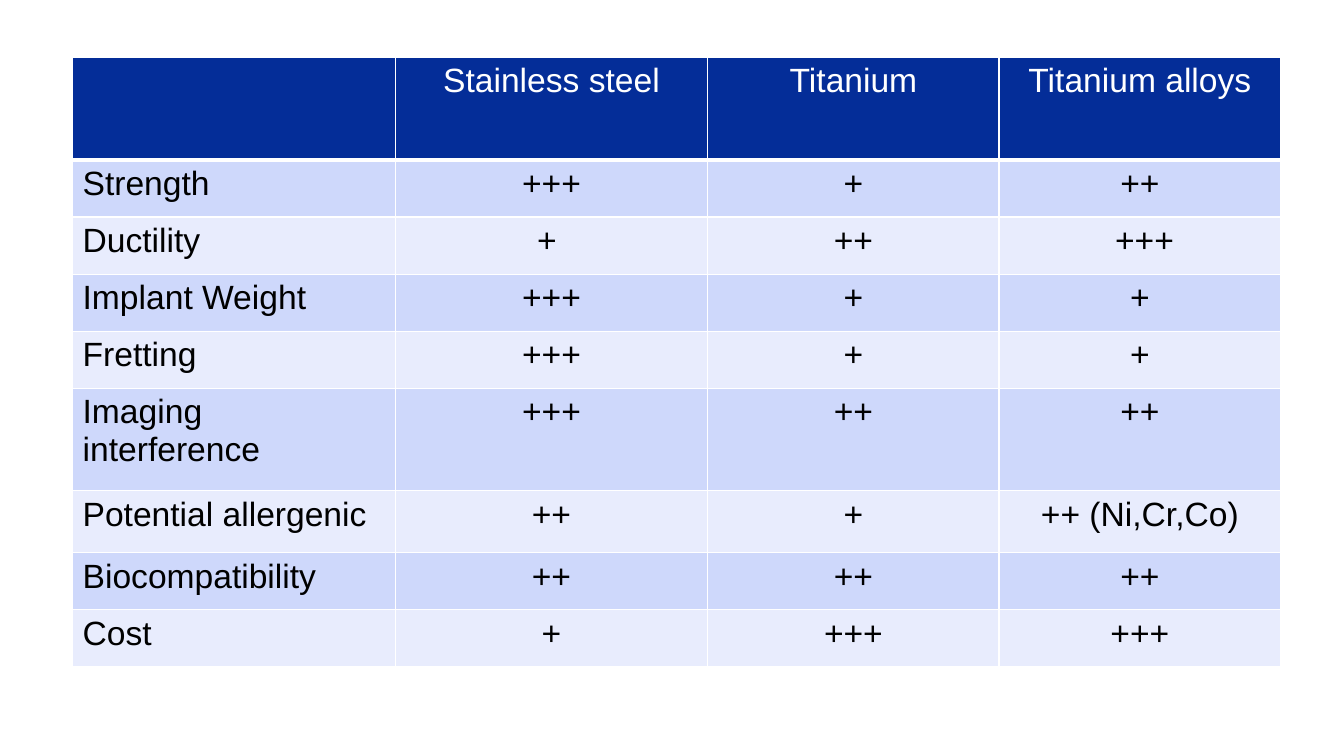
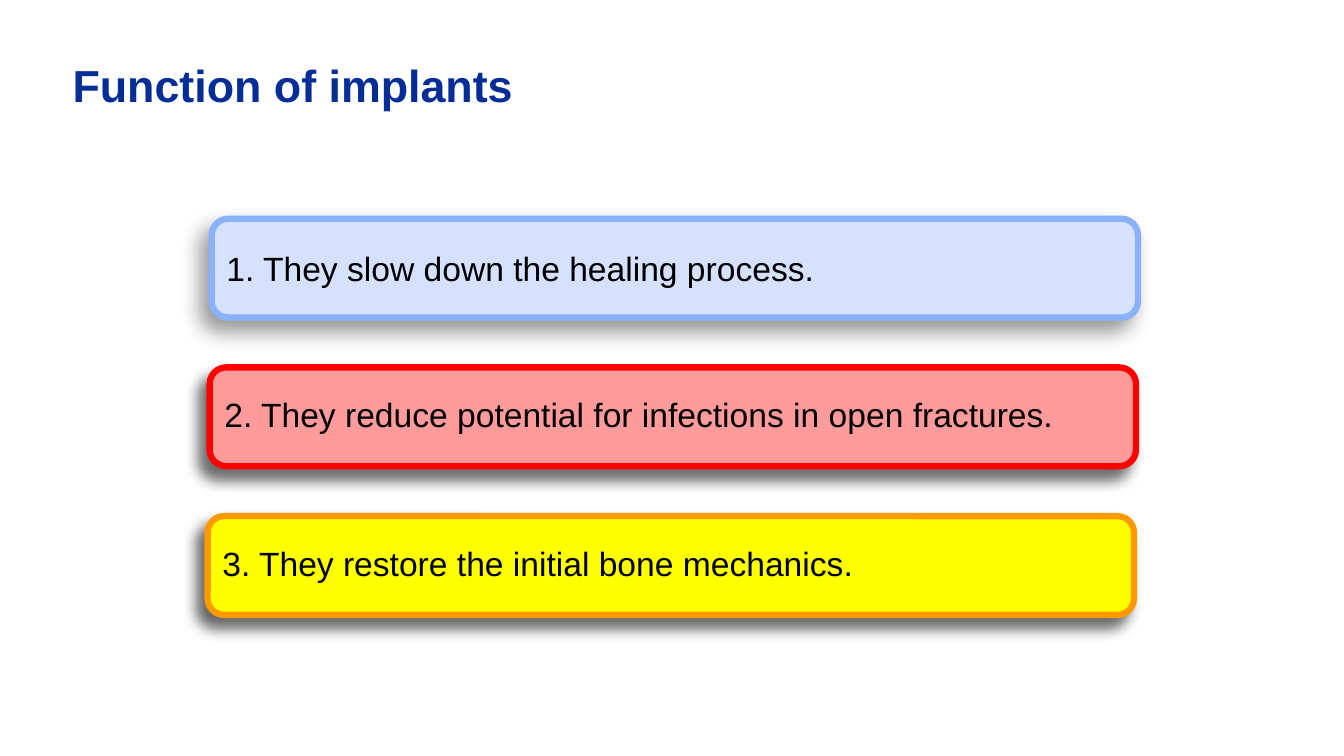
from dataclasses import dataclass
from typing import Any

from lxml.etree import SubElement
from pptx import Presentation
from pptx.dml.color import RGBColor
from pptx.enum.shapes import MSO_SHAPE
from pptx.enum.text import MSO_ANCHOR, PP_ALIGN
from pptx.oxml.ns import qn
from pptx.util import Pt

COLORS = {
    "navy": "042D98",
    "white": "FFFFFF",
    "black": "000000",
    "band_dark": "CED8FB",
    "band_light": "E8ECFD",
    "blue_fill": "D6E1FF",
    "blue_line": "89B2FA",
    "red_fill": "FF9B9B",
    "red_line": "FF0000",
    "yellow_fill": "FFFF00",
    "orange_line": "FF9900",
}
TITLE_FONT = {"name": "Arial", "size": Pt(32), "bold": True}
BODY_FONT = {"name": "Arial", "size": Pt(24), "bold": False}
TITLE_FRAME = {
    "word_wrap": True,
    "vertical_anchor": MSO_ANCHOR.TOP,
    "margin_left": 0,
    "margin_top": 0,
    "margin_right": 0,
    "margin_bottom": 0,
}
STATEMENT_FRAME = {"word_wrap": True, "vertical_anchor": MSO_ANCHOR.MIDDLE}
CELL_FORMAT = {
    "margin_left": Pt(7.2),
    "margin_top": Pt(3.6),
    "margin_right": Pt(7.2),
    "margin_bottom": Pt(3.6),
    "vertical_anchor": MSO_ANCHOR.TOP,
}
TABLE_FLAGS = {"first_row": False, "horz_banding": False}
MARGIN_LEFT, MARGIN_TOP = 51.84, 41.04
COLUMN_WIDTHS = (230.4, 223.4, 208, 201.2)
ROW_HEIGHTS = (73.2, 40.8, 40.8, 40.8, 40.8, 73.2, 44.2, 40.8, 40.8)
ROWS = (
    ("", "Stainless steel", "Titanium", "Titanium alloys"),
    ("Strength", "+++", "+", "++"),
    ("Ductility", "+ ", "++", " +++"),
    ("Implant Weight", "+++", "+", "+"),
    ("Fretting", "+++", "+", "+"),
    ("Imaging interference", "+++", "++", "++"),
    ("Potential allergenic", "++", "+", "++ (Ni,Cr,Co)"),
    ("Biocompatibility", "++", "++", "++"),
    ("Cost", "+", "+++", "+++"),
)


@dataclass(frozen=True)
class Statement:
    """A numbered statement with its box colours and shadow."""

    text: str
    fill: str
    line: str
    opacity: int
    blur: int
    line_spacing: float


STATEMENTS = (
    Statement("1. They slow down the healing process.",
              "blue_fill", "blue_line", 40, 15, 1.0),
    Statement("2. They reduce potential for infections in open fractures.",
              "red_fill", "red_line", 56, 10, 0.9),
    Statement("3. They restore the initial bone mechanics.",
              "yellow_fill", "orange_line", 58, 10, 0.9),
)


def color(name: str) -> RGBColor:
    """Look up a named colour."""
    return RGBColor.from_string(COLORS[name])


def apply_format(target: Any, values: dict[str, Any]) -> None:
    """Set every format value on the target."""
    for name, value in values.items():
        setattr(target, name, value)


def paint(fill: Any, name: str) -> None:
    """Make a fill solid in a named colour."""
    fill.solid()
    fill.fore_color.rgb = color(name)


def write(para: Any, text: str, font: dict[str, Any], ink: str,
          align: PP_ALIGN = PP_ALIGN.LEFT) -> None:
    """Write one formatted span into a paragraph."""
    para.alignment = align
    span = para.add_run()
    span.text = text
    apply_format(span.font, font)
    span.font.color.rgb = color(ink)


def add_title(page: Any, text: str) -> None:
    """Add the slide title."""
    box = page.shapes.add_textbox(
        Pt(MARGIN_LEFT), Pt(MARGIN_TOP), Pt(856), Pt(76.32))
    apply_format(box.text_frame, TITLE_FRAME)
    write(box.text_frame.paragraphs[0], text, TITLE_FONT, "navy")


def add_borders(cell: Any, widths: dict[str, float]) -> None:
    """Draw white borders of the given widths around a cell."""
    properties = cell._tc.get_or_add_tcPr()
    for side, width in widths.items():
        line = SubElement(properties, qn(f"a:ln{side}"), w=str(Pt(width)))
        solid = SubElement(line, qn("a:solidFill"))
        SubElement(solid, qn("a:srgbClr"), val=COLORS["white"])


def add_shadow(box: Any, opacity: int, blur: int) -> None:
    """Cast a shadow to the lower left of a box."""
    box.shadow.inherit = False
    effects = box.element.spPr.find(qn("a:effectLst"))
    shadow = SubElement(effects, qn("a:outerShdw"), blurRad=str(Pt(blur)),
                        dist=str(Pt(10)), dir=str(135 * 60000),
                        algn="tr", rotWithShape="0")
    tint = SubElement(shadow, qn("a:srgbClr"), val=COLORS["black"])
    SubElement(tint, qn("a:alpha"), val=str(opacity * 1000))


def add_comparison(page: Any) -> None:
    """Add the table that compares the implant materials."""
    table = page.shapes.add_table(
        len(ROWS), len(COLUMN_WIDTHS), Pt(MARGIN_LEFT), Pt(MARGIN_TOP),
        Pt(sum(COLUMN_WIDTHS)), Pt(sum(ROW_HEIGHTS))).table
    apply_format(table, TABLE_FLAGS)
    for column, width in zip(table.columns, COLUMN_WIDTHS):
        column.width = Pt(width)
    for index, (row, height, texts) in enumerate(
            zip(table.rows, ROW_HEIGHTS, ROWS)):
        row.height = Pt(height)
        header = index == 0
        band = "navy" if header else "band_dark" if index % 2 else "band_light"
        widths = {"L": 1, "R": 1, "T": 3 if index == 1 else 1,
                  "B": 3 if header else 1}
        for position, (cell, text) in enumerate(zip(row.cells, texts)):
            apply_format(cell, CELL_FORMAT)
            add_borders(cell, widths)
            paint(cell.fill, band)
            if text:
                write(cell.text_frame.paragraphs[0], text, BODY_FONT,
                      "white" if header else "black",
                      PP_ALIGN.CENTER if position else PP_ALIGN.LEFT)


def add_statement(page: Any, index: int, statement: Statement) -> None:
    """Add one statement box, each a little further left than the last."""
    box = page.shapes.add_shape(
        MSO_SHAPE.ROUNDED_RECTANGLE, Pt(151.2 - 1.44 * index),
        Pt(156.24 + 106.2 * index), Pt(661.68), Pt(70.56))
    paint(box.fill, statement.fill)
    paint(box.line.fill, statement.line)
    box.line.width = Pt(4.5)
    add_shadow(box, statement.opacity, statement.blur)
    apply_format(box.text_frame, STATEMENT_FRAME)
    para = box.text_frame.paragraphs[0]
    para.line_spacing = statement.line_spacing
    write(para, statement.text, BODY_FONT, "black")


def main() -> None:
    """Build and save the deck."""
    deck = Presentation()
    deck.slide_width, deck.slide_height = Pt(960), Pt(540)
    blank = deck.slide_layouts[6]
    add_comparison(deck.slides.add_slide(blank))
    page = deck.slides.add_slide(blank)
    add_title(page, "Function of implants")
    for index, statement in enumerate(STATEMENTS):
        add_statement(page, index, statement)
    deck.save("out.pptx")


if __name__ == "__main__":
    main()
